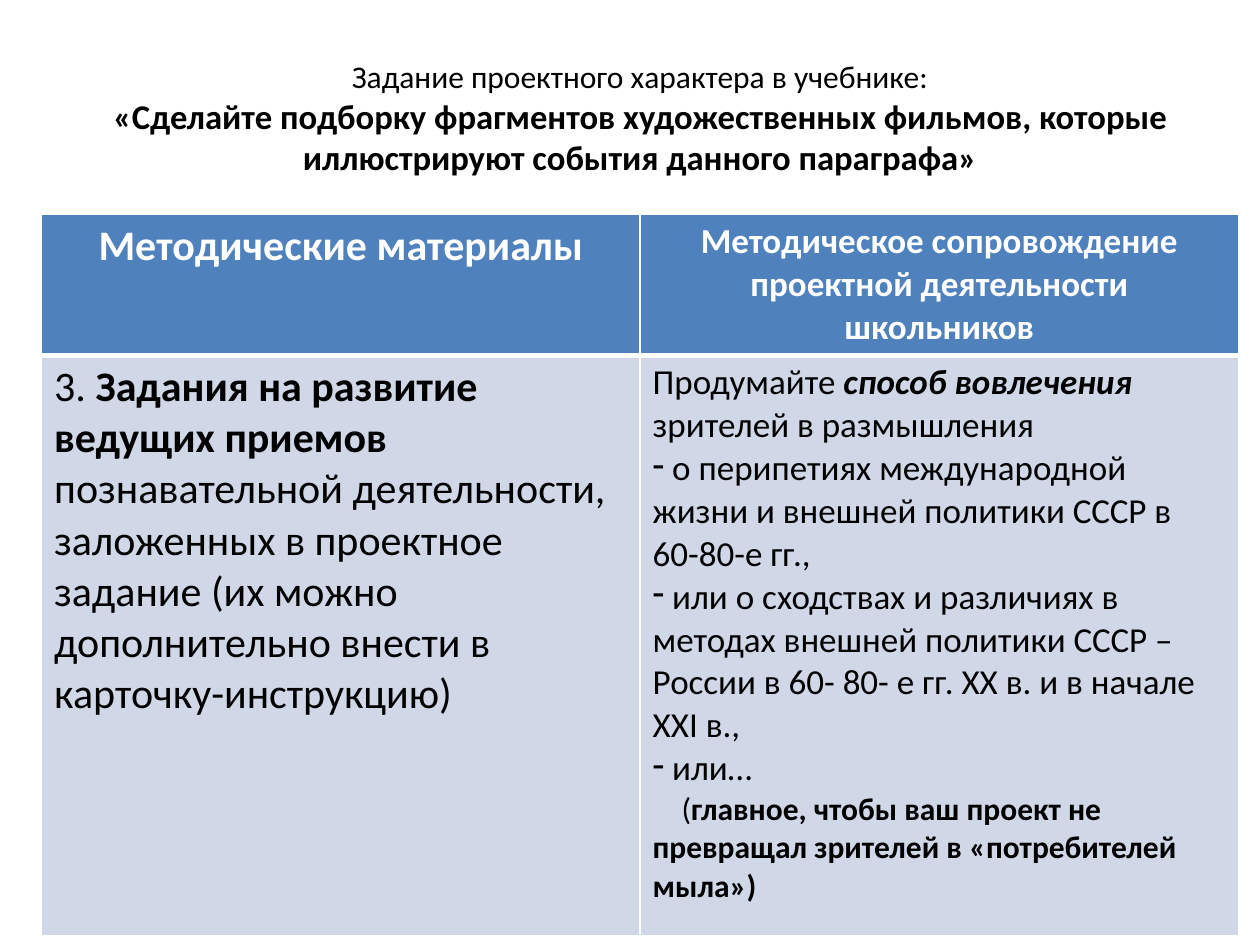
from lxml import etree
from pptx import Presentation
from pptx.dml.color import RGBColor
from pptx.enum.text import MSO_ANCHOR, PP_ALIGN
from pptx.oxml.ns import qn
from pptx.util import Inches, Pt

CENTER, LEFT = PP_ALIGN.CENTER, PP_ALIGN.LEFT
TOP = MSO_ANCHOR.TOP
FONT = "Calibri"
BLACK = RGBColor(0, 0, 0)
WHITE = RGBColor(255, 255, 255)
HEADER_BLUE = RGBColor(0x4F, 0x81, 0xBD)
BODY_BLUE = RGBColor(0xD0, 0xD8, 0xE8)

SLIDE_W, SLIDE_H = 10, 7.5
MARGIN = 0.33
CONTENT_W = 9.5
TITLE_TOP, TITLE_H = 0.45, 1.17
TABLE_TOP = 1.7
ROW_HEIGHTS = (1.12, 4.61)
FIRST_LINE_INDENT = 0.23

# A paragraph is (size, [(text, style)], lead); style holds "b" and "i",
# lead is "dash", "indent" or empty.
TITLE = [
    (18, [("Задание проектного характера в учебнике:", "")], ""),
    (19.8, [("«Сделайте подборку фрагментов художественных фильмов, которые "
             "иллюстрируют события данного параграфа»", "b")], ""),
]
HEADERS = [
    [(24, [("Методические материалы", "b")], "")],
    [(20, [("Методическое сопровождение проектной деятельности школьников", "b")], "")],
]
BODY = [
    [(24, [("3. ", ""),
           ("Задания на развитие ведущих приемов", "b"),
           (" познавательной деятельности, заложенных в проектное задание "
            "(их можно дополнительно внести в карточку-инструкцию)", "")], "")],
    [(20, [("Продумайте ", ""),
           ("способ вовлечения ", "bi"),
           ("зрителей в размышления", "")], ""),
     (20, [(" о перипетиях международной жизни и внешней политики СССР "
            "в 60-80-е гг.,", "")], "dash"),
     (20, [(" или о сходствах и различиях в методах внешней политики СССР – "
            "России в 60- 80- е гг. ХХ в. и в начале ХХI в.,", "")], "dash"),
     (20, [(" или…", "")], "dash"),
     (18, [("(", ""),
           ("главное, чтобы ваш проект не превращал зрителей "
            "в «потребителей мыла»)", "b")], "indent")],
]


def set_lead(paragraph, lead):
    """Start the first line with a dash bullet or an indent."""
    properties = paragraph._p.get_or_add_pPr()
    indent = Inches(FIRST_LINE_INDENT) if lead == "indent" else 0
    properties.set("marL", "0")
    properties.set("indent", str(indent))
    if lead == "dash":
        etree.SubElement(properties, qn("a:buChar"), char="-")


def write_paragraphs(frame, content, color, align):
    for index, (size, runs, lead) in enumerate(content):
        paragraph = frame.add_paragraph() if index else frame.paragraphs[0]
        paragraph.alignment = align
        paragraph.font.name = FONT
        paragraph.font.size = Pt(size)
        paragraph.font.color.rgb = color
        set_lead(paragraph, lead)
        for text, style in runs:
            run = paragraph.add_run()
            run.text = text
            run.font.name = FONT
            run.font.size = Pt(size)
            run.font.color.rgb = color
            run.font.bold = "b" in style
            run.font.italic = "i" in style


def set_borders(cell, bottom_width):
    widths = {"a:lnL": 1, "a:lnR": 1, "a:lnT": 1, "a:lnB": bottom_width}
    properties = cell._tc.get_or_add_tcPr()
    for position, (side, width) in enumerate(widths.items()):
        line = etree.Element(qn(side), w=str(Pt(width)))
        fill = etree.SubElement(line, qn("a:solidFill"))
        etree.SubElement(fill, qn("a:srgbClr"), val=str(WHITE))
        properties.insert(position, line)


def add_title(slide):
    box = slide.shapes.add_textbox(Inches(MARGIN), Inches(TITLE_TOP),
                                   Inches(CONTENT_W), Inches(TITLE_H))
    frame = box.text_frame
    frame.word_wrap = True
    frame.vertical_anchor = TOP
    frame.margin_top = frame.margin_bottom = 0
    write_paragraphs(frame, TITLE, BLACK, CENTER)


def fill_row(table, row, contents, fill, color, align, bottom_width):
    table.rows[row].height = Inches(ROW_HEIGHTS[row])
    for column, content in enumerate(contents):
        cell = table.cell(row, column)
        cell.fill.solid()
        cell.fill.fore_color.rgb = fill
        set_borders(cell, bottom_width)
        write_paragraphs(cell.text_frame, content, color, align)


def add_guidance_table(slide):
    table = slide.shapes.add_table(
        len(ROW_HEIGHTS), len(HEADERS), Inches(MARGIN), Inches(TABLE_TOP),
        Inches(CONTENT_W), Inches(sum(ROW_HEIGHTS))).table
    fill_row(table, 0, HEADERS, HEADER_BLUE, WHITE, CENTER, 3)
    fill_row(table, 1, BODY, BODY_BLUE, BLACK, LEFT, 1)


def main():
    deck = Presentation()
    deck.slide_width, deck.slide_height = Inches(SLIDE_W), Inches(SLIDE_H)
    slide = deck.slides.add_slide(deck.slide_layouts[6])
    add_title(slide)
    add_guidance_table(slide)
    deck.save("out.pptx")


if __name__ == "__main__":
    main()
